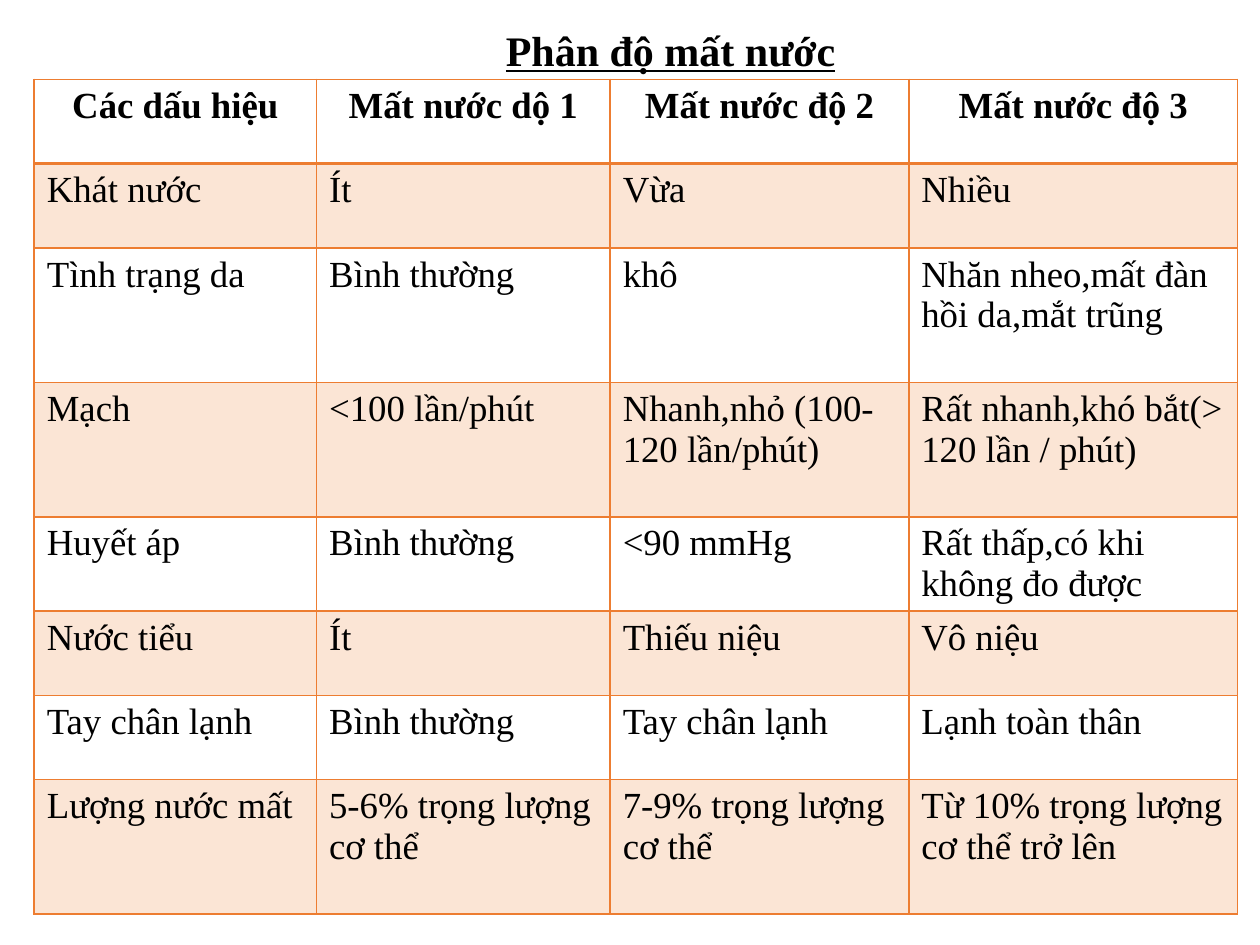
from lxml import etree
from pptx import Presentation
from pptx import util as u
from pptx.dml import color
from pptx.enum import text
from pptx.oxml import ns

COLOURS = {"text": "000000", "accent": "ED7D31"}
FONT = "Times New Roman"
BAND_OPACITY = 20
SHORT, TALL = 1.7, 2.71
COLUMN_WIDTHS = [5.69, 5.92, 6.02, 6.63]
ROWS = [
    (SHORT, ["Các dấu hiệu", "Mất nước dộ 1", "Mất nước độ 2", "Mất nước độ 3"]),
    (SHORT, ["Khát nước", "Ít", "Vừa", "Nhiều"]),
    (TALL, ["Tình trạng da", "Bình thường", "khô", "Nhăn nheo,mất đàn hồi da,mắt trũng"]),
    (TALL, ["Mạch", "<100 lần/phút", "Nhanh,nhỏ (100-120 lần/phút)",
            "Rất nhanh,khó bắt(> 120 lần / phút)"]),
    (1.88, ["Huyết áp", "Bình thường", "<90 mmHg", "Rất thấp,có khi không đo được"]),
    (SHORT, ["Nước tiểu", "Ít", "Thiếu niệu", "Vô niệu"]),
    (SHORT, ["Tay chân lạnh", "Bình thường", "Tay chân lạnh", "Lạnh toàn thân"]),
    (TALL, ["Lượng nước mất", "5-6% trọng lượng cơ thể", "7-9% trọng lượng cơ thể",
            "Từ 10% trọng lượng cơ thể trở lên"]),
]


def style_paragraph(paragraph, size, bold=False, centred=False):
    font = paragraph.font
    font.name, font.size, font.bold = FONT, u.Pt(size), bold
    font.color.rgb = color.RGBColor.from_string(COLOURS["text"])
    paragraph.alignment = text.PP_ALIGN.CENTER if centred else text.PP_ALIGN.LEFT


def set_borders(cell, top, bottom):
    """Draw the four cell borders; widths are in points."""
    properties = cell._tc.get_or_add_tcPr()
    for side, width in (("L", 1), ("R", 1), ("T", top), ("B", bottom)):
        line = etree.SubElement(properties, ns.qn(f"a:ln{side}"), w=str(u.Pt(width)))
        fill = etree.SubElement(line, ns.qn("a:solidFill"))
        etree.SubElement(fill, ns.qn("a:srgbClr"), val=COLOURS["accent"])


def set_band(cell, banded):
    """Tint a banded cell with the translucent accent, leave others clear."""
    if not banded:
        cell.fill.background()
        return
    cell.fill.solid()
    cell.fill.fore_color.rgb = color.RGBColor.from_string(COLOURS["accent"])
    tint = cell._tc.tcPr.find(f"{ns.qn('a:solidFill')}/{ns.qn('a:srgbClr')}")
    etree.SubElement(tint, ns.qn("a:alpha"), val=str(BAND_OPACITY * 1000))


def add_title(slide, left, top, width, height):
    box = slide.shapes.add_textbox(u.Cm(left), u.Cm(top), u.Cm(width), u.Cm(height))
    frame = box.text_frame
    frame.word_wrap = True
    frame.auto_size = text.MSO_AUTO_SIZE.SHAPE_TO_FIT_TEXT
    paragraph = frame.paragraphs[0]
    paragraph.text = "Phân độ mất nước"
    style_paragraph(paragraph, 24, bold=True, centred=True)
    paragraph.font.underline = True


def add_signs_table(slide, left, top):
    width = sum(COLUMN_WIDTHS)
    height = sum(row_height for row_height, _ in ROWS)
    table = slide.shapes.add_table(len(ROWS), len(COLUMN_WIDTHS), u.Cm(left), u.Cm(top),
                                   u.Cm(width), u.Cm(height)).table
    table.first_row = table.horz_banding = False
    for column, column_width in zip(table.columns, COLUMN_WIDTHS):
        column.width = u.Cm(column_width)

    for index, (row_height, words) in enumerate(ROWS):
        row = table.rows[index]
        row.height = u.Cm(row_height)
        header = index == 0
        for cell, word in zip(row.cells, words):
            cell.text = word
            style_paragraph(cell.text_frame.paragraphs[0], 21, bold=header, centred=header)
            # The rule under the header is heavier
            set_borders(cell, top=2 if index == 1 else 1, bottom=2 if header else 1)
            set_band(cell, banded=index % 2 == 1)


def main():
    presentation = Presentation()
    presentation.slide_width, presentation.slide_height = u.Cm(25.4), u.Cm(19.05)
    slide = presentation.slides.add_slide(presentation.slide_layouts[6])
    add_signs_table(slide, 0.69, 1.6)
    add_title(slide, 2.46, 0.36, 22.12, 1.27)
    presentation.save("out.pptx")


if __name__ == "__main__":
    main()
